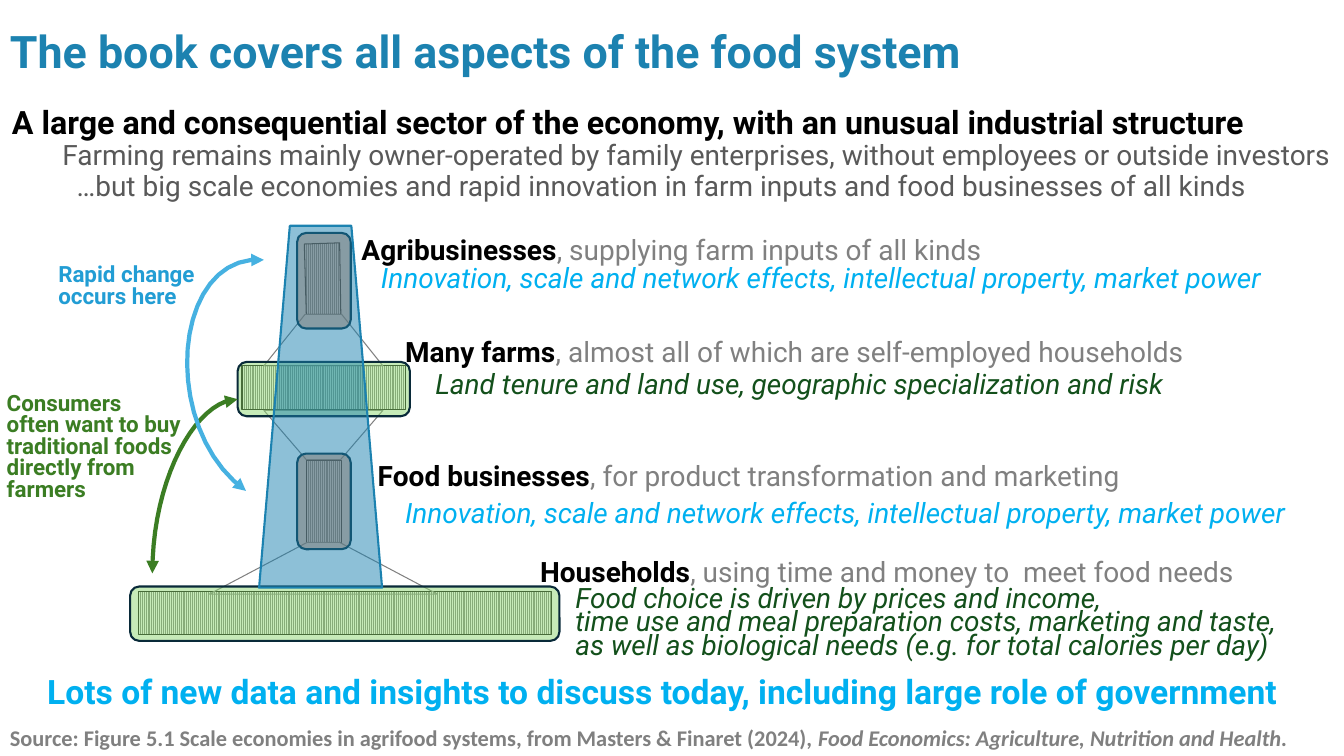
from lxml.etree import SubElement
from pptx import Presentation
from pptx.dml.color import RGBColor
from pptx.enum.dml import MSO_PATTERN
from pptx.enum.shapes import MSO_SHAPE
from pptx.enum.text import MSO_ANCHOR
from pptx.oxml.ns import qn
from pptx.util import Cm, Pt

HUES = {
    "title": "1C82B0", "black": "000000", "white": "FFFFFF",
    "grey": "808080", "dark": "595959", "sky": "00B0F0",
    "forest": "13501B", "leaf": "3B7D23", "lime": "8ED973",
    "orange": "E97132", "navy": "092A39", "arc": "46B1E1",
    "rapid": "229DD4",
}


class Deck:
    def __init__(self):
        self.prs = Presentation()
        self.prs.slide_width, self.prs.slide_height = Cm(33.87), Cm(19.05)
        self.slide = self.prs.slides.add_slide(self.prs.slide_layouts[6])
        self.font = "Roboto"

    def hue(self, name):
        return RGBColor.from_string(HUES[name])

    def style(self, shape, line, width, fill=None, dots=None):
        """Set outline, then a half-clear fill, a pattern or no fill."""
        shape.shadow.inherit = False
        shape.line.color.rgb = self.hue(line)
        shape.line.width = Pt(width)
        if dots:
            shape.fill.patterned()
            shape.fill.pattern = dots
            shape.fill.fore_color.rgb = self.hue("grey")
            shape.fill.back_color.rgb = self.hue("white")
        elif fill:
            shape.fill.solid()
            shape.fill.fore_color.rgb = self.hue(fill)
            tint = shape.fill._xPr.find(".//" + qn("a:srgbClr"))
            SubElement(tint, qn("a:alpha"), val="50000")
        else:
            shape.fill.background()

    def shape(self, kind, box, line, width, adj=None, turn=0, **look):
        shape = self.slide.shapes.add_shape(kind, *map(Cm, box))
        if adj is not None:
            shape.adjustments[0] = adj
        shape.rotation = turn
        self.style(shape, line, width, **look)

    def free(self, points, line, width, close=True, **look):
        first, *rest = [(Cm(x), Cm(y)) for x, y in points]
        form = self.slide.shapes.build_freeform(*first)
        form.add_line_segments(rest, close=close)
        shape = form.convert_to_shape()
        self.style(shape, line, width, **look)
        return shape

    def curve(self, ends, line, steps=20):
        """Draw a two-headed arrow along a cubic curve of four points."""
        points = []
        for k in range(steps + 1):
            t = k / steps
            parts = ((1 - t) ** 3, 3 * t * (1 - t) ** 2,
                     3 * t * t * (1 - t), t ** 3)
            points.append([sum(w * p[i] for w, p in zip(parts, ends))
                           for i in (0, 1)])
        shape = self.free(points, line, 3, close=False)
        edge = shape.line._get_or_add_ln()
        for end in ("a:headEnd", "a:tailEnd"):
            SubElement(edge, qn(end), type="triangle")

    def text(self, box, paras, space=1.0, anchor=MSO_ANCHOR.TOP):
        """Each paragraph is (indent in cm, runs)."""
        frame = self.slide.shapes.add_textbox(*map(Cm, box)).text_frame
        frame.word_wrap = True
        frame.vertical_anchor = anchor
        for k, (inset, runs) in enumerate(paras):
            para = frame.add_paragraph() if k else frame.paragraphs[0]
            para.line_spacing = space
            if inset:
                para._p.get_or_add_pPr().set("marL", str(Cm(inset)))
            for run in runs:
                self.run(para, *run)

    def run(self, para, words, size, hue, bold=False, slant=False, font=None):
        for k, part in enumerate(words.split("\n")):
            if k:
                para.add_line_break()
            run = para.add_run()
            run.text = part
            run.font.name = font or self.font
            run.font.size = Pt(size)
            run.font.bold, run.font.italic = bold, slant
            run.font.color.rgb = self.hue(hue)


def draw_tower(deck):
    light, narrow = MSO_PATTERN.LIGHT_VERTICAL, MSO_PATTERN.NARROW_VERTICAL
    deck.free([(7.67, 6.15), (8.56, 6.12), (8.59, 7.92), (7.72, 7.92)],
              "black", 0.75, dots=light)
    for box, dots in (((7.72, 11.61, 0.89, 2.06), light),
                      ((6.1, 9.22, 4.11, 1.09), narrow),
                      ((3.48, 14.91, 10.41, 1.09), narrow)):
        deck.shape(MSO_SHAPE.RECTANGLE, box, "black", 0.75, dots=dots)
    for box, adj, turn in (((6.65, 7.92, 3, 1.3), 0.8, 0),
                           ((5.28, 13.67, 5.74, 1.3), 1.89, 0),
                           ((6.65, 10.34, 3, 1.24), 0.86, 180)):
        deck.shape(MSO_SHAPE.TRAPEZOID, box, "grey", 0.75, adj, turn)
    for box, fill in (((7.49, 5.87, 1.35, 2.41), "orange"),
                      ((7.49, 11.43, 1.35, 2.41), "orange"),
                      ((5.99, 9.12, 4.34, 1.37), "lime"),
                      ((3.28, 14.78, 10.82, 1.37), "lime")):
        deck.shape(MSO_SHAPE.ROUNDED_RECTANGLE, box, "navy", 1.5, fill=fill)
    deck.shape(MSO_SHAPE.TRAPEZOID, (6.53, 5.69, 3.1, 9.12), "title", 1.5,
               0.25, fill="title")
    deck.curve([(5.99, 10.06), (4.95, 10.08), (3.84, 12.04), (3.84, 14.45)],
               "leaf")
    deck.curve([(6.65, 6.55), (4.34, 6.35), (3.99, 10.8), (6.2, 12.37)],
               "arc")


def draw_stages(deck):
    power = ("Innovation, scale and network effects, "
             "intellectual property, market power")
    needs = ("Food choice is driven by prices and income,\n"
             "time use and meal preparation costs, marketing and taste,\n"
             "as well as biological needs (e.g. for total calories per day)")
    land = "Land tenure and land use, geographic specialization and risk"
    heads = (
        (8.86, 5.74, 1, "Agribusinesses",
         ", supplying farm inputs of all kinds"),
        (9.96, 8.46, 0.8, "Many farms",
         ", almost all of which are self-employed households"),
        (9.27, 11.43, 1, "Food businesses",
         ", for product transformation and marketing"),
        (13.36, 13.84, 1, "Households",
         ", using time and money to  meet food needs"),
    )
    for x, y, space, name, role in heads:
        deck.text((x, y, 33.5 - x, 1.12),
                  [(0, [(name, 20, "black", True), (role, 20, "grey")])],
                  space)
    notes = ((9.35, 6.45, 1.12, 1, power, "sky"),
             (10.72, 9.12, 1.12, 1, land, "forest"),
             (9.96, 12.37, 1.12, 1, power, "sky"),
             (14.25, 14.73, 2.11, 0.7, needs, "forest"))
    for x, y, high, space, words, hue in notes:
        deck.text((x, y, 33.8 - x, high),
                  [(0, [(words, 20, hue, False, True)])], space)


def draw_words(deck):
    mid = MSO_ANCHOR.MIDDLE
    deck.text((0, 0.43, 33.87, 1.88), [(0, [
        ("The book covers all aspects of the food system",
         32, "title", True)])], 0.9, mid)
    deck.text((0.05, 2.57, 33.82, 2.62), [
        (0, [("A large and consequential sector of the economy, "
              "with an unusual industrial structure", 23, "black", True)]),
        (1.27, [("Farming remains mainly owner-operated by family "
                 "enterprises, without employees or outside investors",
                 20, "dark")]),
        (1.63, [("…but big scale economies and rapid innovation in farm "
                 "inputs and food businesses of all kinds", 20, "dark")]),
    ], 0.9)
    deck.text((1.22, 6.2, 4.37, 2.08), [(0, [
        ("Rapid change occurs here", 16, "rapid", True)])], 0.8, mid)
    deck.text((-0.08, 9.45, 5.28, 3.68), [(0, [
        ("Consumers\noften want to buy traditional foods "
         "directly from farmers", 16, "leaf", True)])], 0.8, mid)
    deck.text((0.94, 16.97, 31.72, 0.84), [(0, [
        ("Lots of new data and insights to discuss today, "
         "including large role of government", 24, "sky", True)])], 0.8)
    deck.text((0, 17.83, 33.58, 1.22), [(0, [
        ("Source: Figure 5.1 Scale economies in agrifood systems, "
         "from Masters & Finaret (2024), ", 16, "grey", True, False,
         "Calibri"),
        ("Food Economics: Agriculture, Nutrition and Health.",
         16, "grey", True, True, "Calibri")])], 0.9, MSO_ANCHOR.BOTTOM)


def main():
    deck = Deck()
    draw_tower(deck)
    draw_stages(deck)
    draw_words(deck)
    deck.prs.save("out.pptx")


if __name__ == "__main__":
    main()
